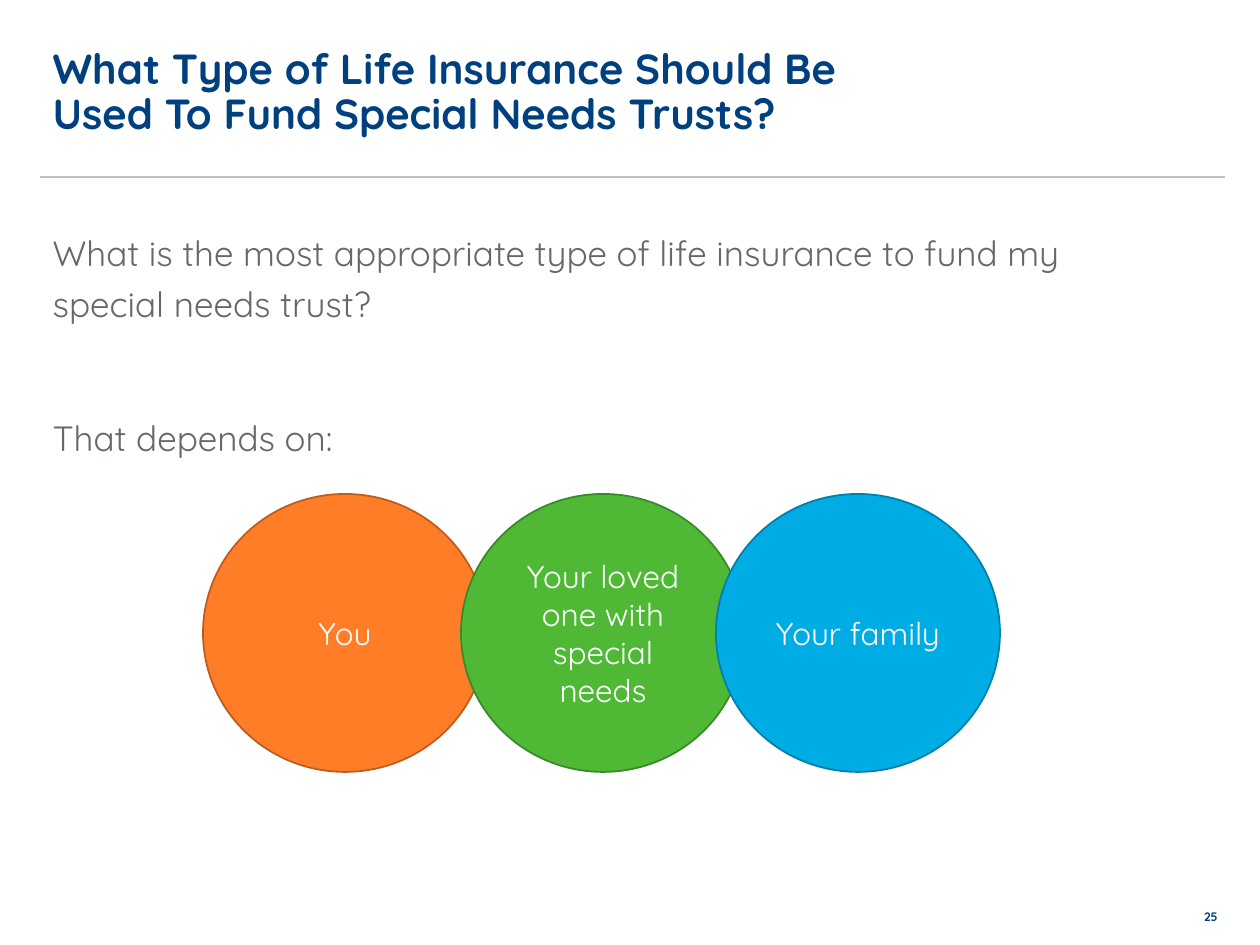
import lxml.etree
import pptx
import pptx.dml.color
import pptx.enum.shapes
import pptx.enum.text
import pptx.oxml.ns
import pptx.util

PX = 914400 // 126
FONT = "Quicksand"
NAVY, GREY, WHITE, RULE = "00407F", "676869", "FFFFFF", "BEC0C0"
LEFT = pptx.enum.text.PP_ALIGN.LEFT
CENTER = pptx.enum.text.PP_ALIGN.CENTER
MIDDLE = pptx.enum.text.MSO_ANCHOR.MIDDLE
TOP = pptx.enum.text.MSO_ANCHOR.TOP

TITLE = "What Type of Life Insurance Should Be Used To Fund Special Needs Trusts?"
BODY = [
    ("What is the most appropriate type of life insurance to fund my special needs trust?", 0),
    ("That depends on:", 48),
]
CIRCLES = [
    ("You", 203, "FF7D27", "BD5C1D"),
    ("Your loved one with special needs", 461, "4FB936", "3A8928"),
    ("Your family", 716, "00ACE4", "007FA9"),
]
CIRCLE_TOP, CIRCLE_WIDTH, CIRCLE_HEIGHT = 494, 284, 278
PAGE_NUMBER = "25"


def color(value):
    return pptx.dml.color.RGBColor.from_string(value)


def box(*lengths):
    return [length * PX for length in lengths]


def apply(target, values):
    for name, value in values.items():
        setattr(target, name, value)


def place(shape, *lengths):
    apply(shape, dict(zip(("left", "top", "width", "height"), box(*lengths))))


def format_frame(shape, anchor):
    apply(shape.text_frame, {
        "word_wrap": True,
        "auto_size": pptx.enum.text.MSO_AUTO_SIZE.NONE,
        "vertical_anchor": anchor,
    })


def write(paragraph, text, size, text_color, bold=False, **layout):
    paragraph.text = text
    apply(paragraph, layout)
    apply(paragraph.font, {"name": FONT, "size": pptx.util.Pt(size), "bold": bold})
    paragraph.font.color.rgb = color(text_color)


def remove_bullet(paragraph):
    properties = paragraph._p.get_or_add_pPr()
    properties.set("marL", "0")
    properties.set("indent", "0")
    lxml.etree.SubElement(properties, pptx.oxml.ns.qn("a:buNone"))


presentation = pptx.Presentation()
apply(presentation, {"slide_width": pptx.util.Inches(10), "slide_height": pptx.util.Inches(7.5)})
slide = presentation.slides.add_slide(presentation.slide_layouts[1])

rule = slide.shapes.add_connector(
    pptx.enum.shapes.MSO_CONNECTOR.STRAIGHT, *box(40, 177, 1225, 177))
rule.line.color.rgb = color(RULE)
rule.line.width = pptx.util.Pt(1)
lxml.etree.SubElement(rule._element.spPr, pptx.oxml.ns.qn("a:effectLst"))

title = slide.shapes.title
place(title, 40, 32, 850, 123)
format_frame(title, MIDDLE)
write(title.text_frame.paragraphs[0], TITLE, 24, NAVY, True, alignment=LEFT, line_spacing=0.9)

body = slide.placeholders[1]
place(body, 40, 217, 1100, 467)
format_frame(body, TOP)
for index, (text, space) in enumerate(BODY):
    frame = body.text_frame
    paragraph = frame.add_paragraph() if index else frame.paragraphs[0]
    remove_bullet(paragraph)
    write(paragraph, text, 20, GREY, alignment=LEFT, line_spacing=1.2,
          space_before=pptx.util.Pt(space))

for text, left, fill, outline in CIRCLES:
    circle = slide.shapes.add_shape(
        pptx.enum.shapes.MSO_SHAPE.OVAL, *box(left, CIRCLE_TOP, CIRCLE_WIDTH, CIRCLE_HEIGHT))
    circle.shadow.inherit = False
    circle.fill.solid()
    circle.fill.fore_color.rgb = color(fill)
    circle.line.color.rgb = color(outline)
    circle.line.width = pptx.util.Pt(1)
    format_frame(circle, MIDDLE)
    write(circle.text_frame.paragraphs[0], text, 18, WHITE, alignment=CENTER)

number = slide.shapes.add_textbox(*box(1189, 903, 44, 42))
format_frame(number, TOP)
apply(number.text_frame, {"margin_left": 0, "margin_right": 0})
write(number.text_frame.paragraphs[0], PAGE_NUMBER, 7, NAVY, True, alignment=CENTER)

presentation.save("out.pptx")
